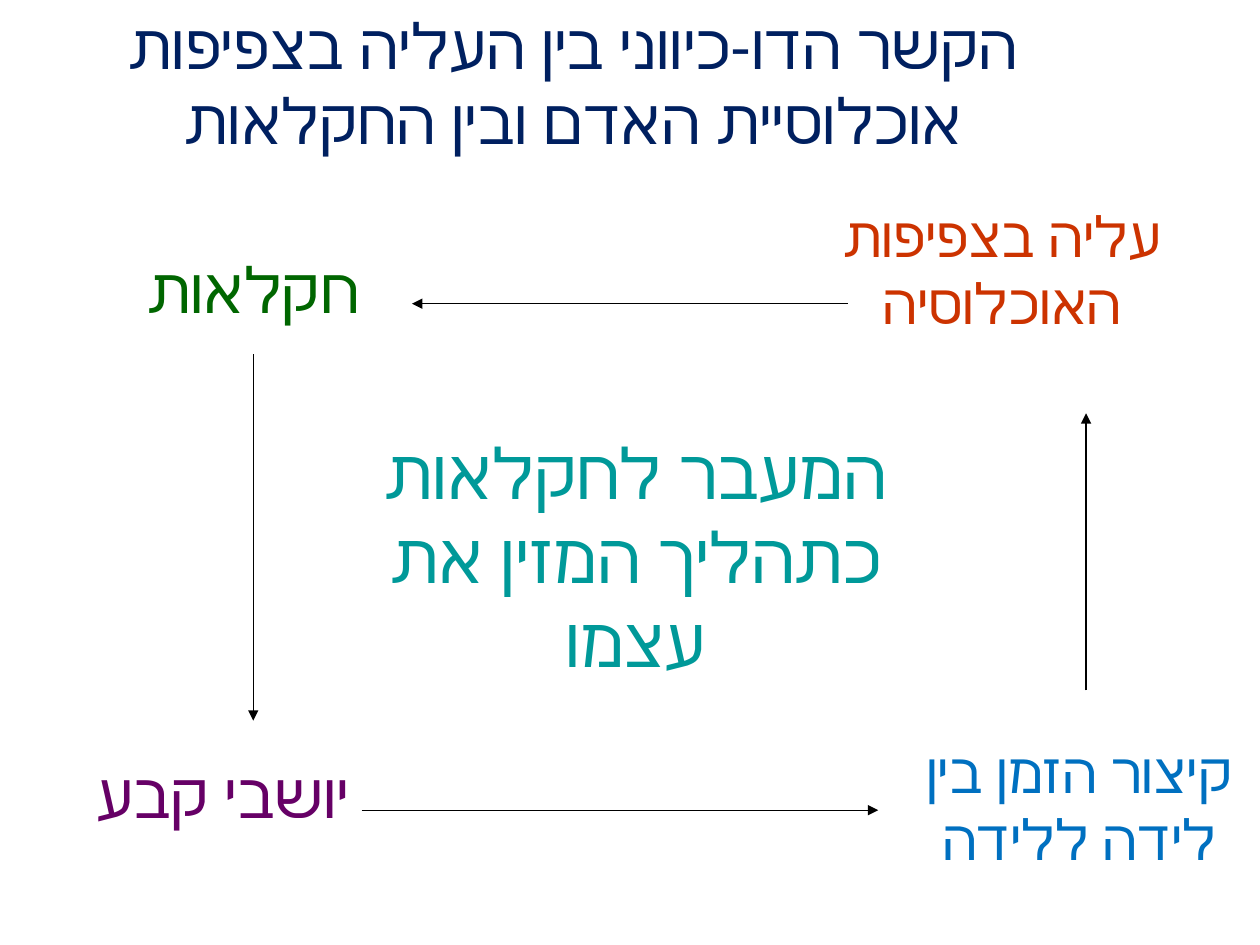
from dataclasses import dataclass

from lxml.etree import SubElement
from pptx import Presentation
from pptx.dml.color import RGBColor
from pptx.enum.shapes import MSO_CONNECTOR
from pptx.enum.text import MSO_ANCHOR, PP_ALIGN
from pptx.oxml.ns import qn
from pptx.slide import Slide
from pptx.util import Inches, Pt

BLACK = RGBColor(0x00, 0x00, 0x00)
NAVY = RGBColor(0x00, 0x20, 0x60)
TEAL = RGBColor(0x00, 0x99, 0x99)
RED = RGBColor(0xCC, 0x33, 0x00)
GREEN = RGBColor(0x00, 0x66, 0x00)
BLUE = RGBColor(0x00, 0x70, 0xC0)
PURPLE = RGBColor(0x66, 0x00, 0x66)


@dataclass
class Label:
    text: str
    left: float
    top: float
    width: float
    height: float
    size: int
    color: RGBColor
    align: PP_ALIGN = PP_ALIGN.CENTER
    font: str = "Times New Roman"
    anchor: MSO_ANCHOR = MSO_ANCHOR.TOP


@dataclass
class Arrow:
    x1: float
    y1: float
    x2: float
    y2: float


LABELS = [
    Label("המעבר לחקלאות כתהליך המזין את עצמו", 2.72, 3.59, 4.65, 1.64, 40, TEAL,
          font="Arial", anchor=MSO_ANCHOR.MIDDLE),
    Label("עליה בצפיפות האוכלוסיה", 6.5, 1.55, 2.91, 1.17, 32, RED),
    Label("חקלאות", 0.98, 1.94, 1.97, 0.7, 36, GREEN, PP_ALIGN.RIGHT),
    Label("קיצור הזמן בין לידה ללידה", 7.13, 5.8, 2.87, 1.18, 32, BLUE),
    Label("יושבי קבע", 0.51, 5.95, 2.36, 0.7, 36, PURPLE, PP_ALIGN.RIGHT),
    Label("הקשר הדו-כיווני בין העליה בצפיפות אוכלוסיית האדם ובין החקלאות",
          0, 0, 9.1, 1.3, 36, NAVY),
]

ARROWS = [
    Arrow(6.73, 2.41, 3.27, 2.41),
    Arrow(2.01, 2.81, 2.01, 5.72),
    Arrow(2.87, 6.43, 6.97, 6.43),
    Arrow(8.62, 5.48, 8.62, 3.28),
]


def add_label(s: Slide, label: Label) -> None:
    sp = s.shapes.add_textbox(Inches(label.left), Inches(label.top),
                              Inches(label.width), Inches(label.height))
    tf = sp.text_frame
    tf.word_wrap = True
    tf.vertical_anchor = label.anchor
    p = tf.paragraphs[0]
    p.text = label.text
    p.alignment = label.align
    p.font.size = Pt(label.size)
    p.font.name = label.font
    p.font.color.rgb = label.color
    p._p.get_or_add_pPr().set("rtl", "1")


def add_arrow(s: Slide, arrow: Arrow) -> None:
    sp = s.shapes.add_connector(MSO_CONNECTOR.STRAIGHT,
                                Inches(arrow.x1), Inches(arrow.y1),
                                Inches(arrow.x2), Inches(arrow.y2))
    sp.line.color.rgb = BLACK
    sp.line.width = Pt(0.75)
    SubElement(sp.line._get_or_add_ln(), qn("a:tailEnd"), type="triangle")
    SubElement(sp._element.spPr, qn("a:effectLst"))


def main() -> None:
    prs = Presentation()
    prs.slide_width = Inches(10)
    prs.slide_height = Inches(7.5)
    s = prs.slides.add_slide(prs.slide_layouts[6])
    for label in LABELS:
        add_label(s, label)
    for arrow in ARROWS:
        add_arrow(s, arrow)
    prs.save("out.pptx")


if __name__ == "__main__":
    main()
